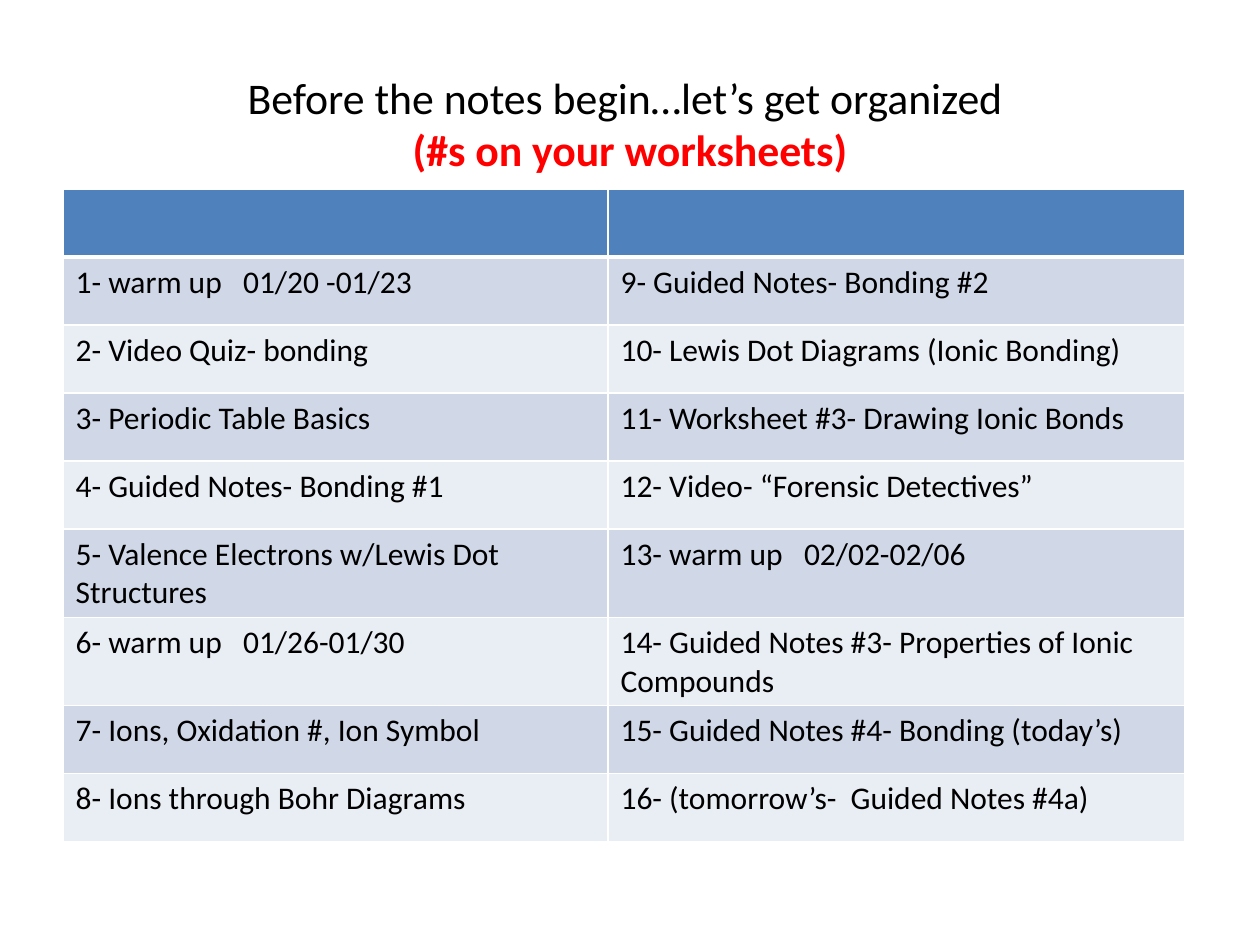
from lxml import etree
from pptx import Presentation, util as u
from pptx.dml.color import RGBColor
from pptx.enum import text
from pptx.oxml import ns

BLACK = RGBColor(0x00, 0x00, 0x00)
RED = RGBColor(0xFF, 0x00, 0x00)
WHITE = RGBColor(0xFF, 0xFF, 0xFF)
HEADER_BLUE = RGBColor(0x4F, 0x81, 0xBD)
BANDS = [RGBColor(0xD0, 0xD8, 0xE8), RGBColor(0xE9, 0xED, 0xF4)]
FONT = "Calibri"

WIDTH, HEIGHT = u.Inches(10), u.Inches(7.5)
TITLE_BOX = (0.05, 0.04, 0.9, 0.18)
TABLE_BOX = (0.05, 0.2, 0.89, 0.648)
COLUMN_SHARES = (0.486, 0.514)

TITLE = "Before the notes begin…let’s get organized \v(#s on your worksheets)"
WORKSHEETS = [
    ("1- warm up   01/20 -01/23", "9- Guided Notes- Bonding #2"),
    ("2- Video Quiz- bonding", "10- Lewis Dot Diagrams (Ionic Bonding)"),
    ("3- Periodic Table Basics", "11- Worksheet #3- Drawing Ionic Bonds"),
    ("4- Guided Notes- Bonding #1", "12- Video- “Forensic Detectives”"),
    ("5- Valence Electrons w/Lewis Dot Structures", "13- warm up   02/02-02/06"),
    ("6- warm up   01/26-01/30", "14- Guided Notes #3- Properties of Ionic  Compounds"),
    ("7- Ions, Oxidation #, Ion Symbol", "15- Guided Notes #4- Bonding (today’s)"),
    ("8- Ions through Bohr Diagrams", "16- (tomorrow’s-  Guided Notes #4a)"),
]


def place(box):
    left, top, width, height = box
    return int(left * WIDTH), int(top * HEIGHT), int(width * WIDTH), int(height * HEIGHT)


def format_run(run, size, color, bold=False):
    run.font.name = FONT
    run.font.size = u.Pt(size)
    run.font.bold = bold
    run.font.color.rgb = color


def add_title(slide, box):
    frame = slide.shapes.add_textbox(*place(box)).text_frame
    frame.word_wrap = True
    frame.vertical_anchor = text.MSO_ANCHOR.MIDDLE
    paragraph = frame.paragraphs[0]
    paragraph.text = TITLE
    paragraph.alignment = text.PP_ALIGN.CENTER
    heading, hint = paragraph.runs
    format_run(heading, 25, BLACK)
    format_run(hint, 25, RED, bold=True)


def set_borders(cell, top, bottom):
    properties = cell._tc.get_or_add_tcPr()
    for side, points in (("L", 1), ("R", 1), ("T", top), ("B", bottom)):
        line = etree.SubElement(properties, ns.qn(f"a:ln{side}"), w=str(u.Pt(points)))
        fill = etree.SubElement(line, ns.qn("a:solidFill"))
        etree.SubElement(fill, ns.qn("a:srgbClr"), val=str(WHITE))


def style_cell(cell, color, top, bottom):
    set_borders(cell, top, bottom)
    cell.fill.solid()
    cell.fill.fore_color.rgb = color


def add_worksheet_table(slide, box):
    left, top, width, height = place(box)
    row_count = len(WORKSHEETS) + 1
    table = slide.shapes.add_table(
        row_count, len(COLUMN_SHARES), left, top, width, height
    ).table
    for column, share in zip(table.columns, COLUMN_SHARES):
        column.width = int(width * share)
    for cell in table.rows[0].cells:
        style_cell(cell, HEADER_BLUE, 1, 3)
    for index, entries in enumerate(WORKSHEETS):
        for cell, entry in zip(table.rows[index + 1].cells, entries):
            style_cell(cell, BANDS[index % 2], 3 if index == 0 else 1, 1)
            cell.text_frame.text = entry
            format_run(cell.text_frame.paragraphs[0].runs[0], 18, BLACK)


def main():
    presentation = Presentation()
    presentation.slide_width, presentation.slide_height = WIDTH, HEIGHT
    slide = presentation.slides.add_slide(presentation.slide_layouts[6])
    add_title(slide, TITLE_BOX)
    add_worksheet_table(slide, TABLE_BOX)
    presentation.save("out.pptx")


if __name__ == "__main__":
    main()
